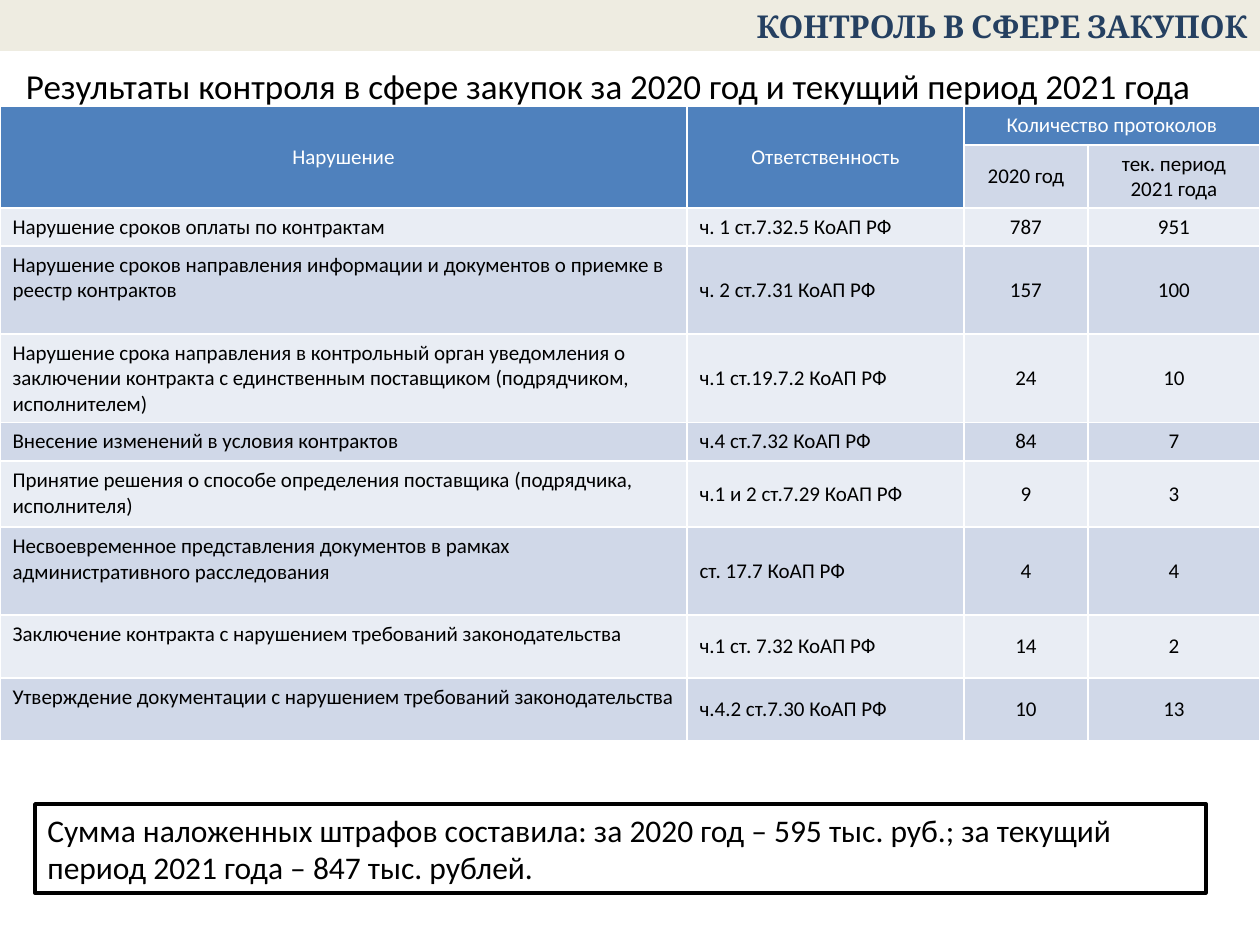
from dataclasses import dataclass

from lxml.etree import SubElement
from pptx import Presentation
from pptx.dml.color import RGBColor
from pptx.enum.shapes import MSO_SHAPE as Shape
from pptx.enum.text import MSO_ANCHOR as Anchor, PP_ALIGN as Align
from pptx.oxml.ns import qn
from pptx.util import Pt

PX = 914400 / 126  # EMU per pixel


@dataclass(frozen=True)
class Theme:
    body_font: str = "Calibri"
    banner_font: str = "Cambria"
    title_size: int = 20
    large_size: int = 18
    table_size: int = 12
    black: str = "000000"
    white: str = "FFFFFF"
    navy: str = "254061"
    beige: str = "EEECE1"
    header: str = "4F81BD"
    band_dark: str = "D0D8E8"
    band_light: str = "E9EDF4"


THEME = Theme()

COLUMNS = [687, 277, 124, 172]
ROW_HEIGHTS = [39, 63, 38, 88, 88, 39, 66, 88, 63, 63]
HEADINGS = ["Нарушение", "Ответственность", "Количество протоколов"]
PERIODS = ["2020 год", "тек. период 2021 года"]
VIOLATIONS = [
    ("Нарушение сроков оплаты по контрактам", "ч. 1 ст.7.32.5 КоАП РФ", 787, 951),
    ("Нарушение сроков направления информации и документов о приемке в реестр контрактов",
     "ч. 2 ст.7.31 КоАП РФ", 157, 100),
    ("Нарушение срока направления в контрольный орган уведомления о заключении контракта "
     "с единственным поставщиком (подрядчиком, исполнителем)", "ч.1 ст.19.7.2 КоАП РФ", 24, 10),
    ("Внесение изменений в условия контрактов", "ч.4 ст.7.32 КоАП РФ", 84, 7),
    ("Принятие решения о способе определения поставщика (подрядчика, исполнителя)",
     "ч.1 и 2 ст.7.29 КоАП РФ", 9, 3),
    ("Несвоевременное представления документов в рамках административного расследования",
     "ст. 17.7 КоАП РФ", 4, 4),
    ("Заключение контракта с нарушением требований законодательства",
     "ч.1 ст. 7.32 КоАП РФ", 14, 2),
    ("Утверждение документации с нарушением требований законодательства",
     "ч.4.2 ст.7.30 КоАП РФ", 10, 13),
]


def emu(*lengths):
    return [round(length * PX) for length in lengths]


def rgb(color):
    return RGBColor.from_string(color)


def write(frame, text, size, color, align=Align.LEFT, font=THEME.body_font, bold=False):
    frame.word_wrap = True
    para = frame.paragraphs[0]
    para.text = text
    para.alignment = align
    para.font.name, para.font.size, para.font.bold = font, Pt(size), bold
    para.font.color.rgb = rgb(color)


def add_panel(page, box, fill, line=None):
    panel = page.shapes.add_shape(Shape.RECTANGLE, *emu(*box))
    panel.shadow.inherit = False
    panel.fill.solid()
    panel.fill.fore_color.rgb = rgb(fill)
    if line:
        panel.line.color.rgb = rgb(line)
        panel.line.width = Pt(2)
    else:
        panel.line.fill.background()
    panel.text_frame.vertical_anchor = Anchor.MIDDLE
    return panel


def add_title(page, box):
    title = page.shapes.add_textbox(*emu(*box))
    title.text_frame.vertical_anchor = Anchor.MIDDLE
    write(title.text_frame,
          "Результаты контроля в сфере закупок за 2020 год и текущий период 2021 года",
          THEME.title_size, THEME.black, Align.CENTER)


def style_cell(cell, fill):
    cell.fill.solid()
    cell.fill.fore_color.rgb = rgb(fill)
    # Borders come before the fill in the cell properties
    props = cell._tc.get_or_add_tcPr()
    for place, side in enumerate(("a:lnL", "a:lnR", "a:lnT", "a:lnB")):
        border = SubElement(props, qn(side), w=str(Pt(1)))
        paint = SubElement(border, qn("a:solidFill"))
        SubElement(paint, qn("a:srgbClr"), val=THEME.white)
        props.insert(place, border)


def fill_cell(cell, text, color=THEME.black, align=Align.CENTER, anchor=Anchor.MIDDLE):
    write(cell.text_frame, text, THEME.table_size, color, align)
    cell.vertical_anchor = anchor


def add_violations_table(page, left, top):
    frame = page.shapes.add_table(len(ROW_HEIGHTS), len(COLUMNS),
                                  *emu(left, top, sum(COLUMNS), sum(ROW_HEIGHTS)))
    table = frame.table
    table.first_row = table.horz_banding = False
    for column, width in zip(table.columns, emu(*COLUMNS)):
        column.width = width
    for row, height in zip(table.rows, emu(*ROW_HEIGHTS)):
        row.height = height

    # Fills: header row, then alternating bands
    for r, row in enumerate(table.rows):
        band = THEME.band_dark if r % 2 else THEME.band_light
        for c, cell in enumerate(row.cells):
            in_header = r == 0 or (r == 1 and c < 2)
            style_cell(cell, THEME.header if in_header else band)

    # Two-level header
    for c in (0, 1):
        table.cell(0, c).merge(table.cell(1, c))
    table.cell(0, 2).merge(table.cell(0, 3))
    for c, heading in enumerate(HEADINGS):
        fill_cell(table.cell(0, c), heading, THEME.white)
    for c, period in enumerate(PERIODS, 2):
        fill_cell(table.cell(1, c), period)

    # Violations
    for r, (violation, article, *counts) in enumerate(VIOLATIONS, 2):
        fill_cell(table.cell(r, 0), violation, align=Align.LEFT, anchor=Anchor.TOP)
        fill_cell(table.cell(r, 1), article, align=Align.LEFT)
        for c, count in enumerate(counts, 2):
            fill_cell(table.cell(r, c), str(count))


def add_fines_box(page, box):
    panel = add_panel(page, box, THEME.white, THEME.black)
    write(panel.text_frame,
          "Сумма наложенных штрафов составила: за 2020 год – 595 тыс. руб.; "
          "за текущий период 2021 года – 847 тыс. рублей.",
          THEME.large_size, THEME.black)


def add_banner(page, box):
    panel = add_panel(page, box, THEME.beige)
    write(panel.text_frame, "КОНТРОЛЬ В СФЕРЕ ЗАКУПОК", THEME.large_size, THEME.navy,
          Align.RIGHT, THEME.banner_font, bold=True)


def main():
    deck = Presentation()
    deck.slide_width, deck.slide_height = emu(1260, 945)
    page = deck.slides.add_slide(deck.slide_layouts[6])
    add_title(page, (0, 50, 1217, 71))
    add_violations_table(page, 0, 106)
    add_fines_box(page, (35, 804, 1171, 89))
    add_banner(page, (0, 0, 1260, 51))
    deck.save("out.pptx")


if __name__ == "__main__":
    main()
